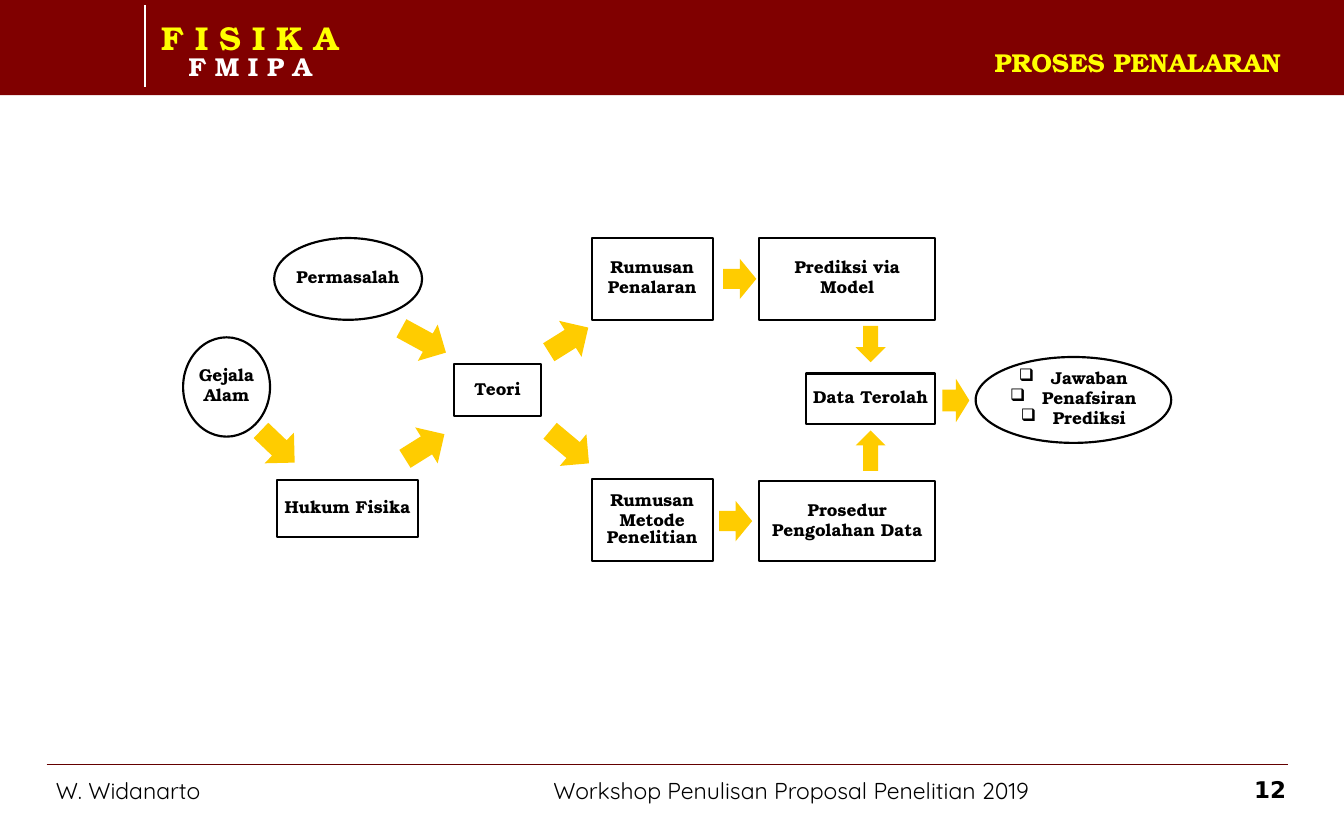
from lxml import etree
from pptx import Presentation
from pptx.dml.color import RGBColor
from pptx.enum.shapes import MSO_CONNECTOR, MSO_SHAPE
from pptx.enum.text import MSO_ANCHOR, PP_ALIGN
from pptx.oxml.ns import qn
from pptx.util import Inches, Pt

RECTANGLE, ELLIPSE = MSO_SHAPE.RECTANGLE, MSO_SHAPE.OVAL
RIGHT_ARROW, DOWN_ARROW, UP_ARROW = MSO_SHAPE.RIGHT_ARROW, MSO_SHAPE.DOWN_ARROW, MSO_SHAPE.UP_ARROW
LEFT, CENTER, RIGHT = PP_ALIGN.LEFT, PP_ALIGN.CENTER, PP_ALIGN.RIGHT
TOP, MIDDLE = MSO_ANCHOR.TOP, MSO_ANCHOR.MIDDLE

MAROON = RGBColor(0x80, 0x00, 0x00)
DARK_RED = RGBColor(0x64, 0x00, 0x00)
YELLOW = RGBColor(0xFF, 0xFF, 0x00)
GOLD = RGBColor(0xFF, 0xCC, 0x00)
WHITE = RGBColor(0xFF, 0xFF, 0xFF)
BLACK = RGBColor(0x00, 0x00, 0x00)

SERIF, SANS, NUMBER_FONT = "TeX Gyre Bonum", "Quicksand", "DejaVu Sans"
SLIDE_WIDTH, SLIDE_HEIGHT = 12.99, 8.03
BAND_HEIGHT = 0.92
BULLET = "❑"
BULLET_INDENT = 0.31
PADDING = (0.11, 0.06)

TITLE = "PROSES PENALARAN"
BRAND = [("F I S I K A", 23, YELLOW, LEFT), ("F M I P A", 18, WHITE, CENTER)]
FOOTERS = [
    ("W. Widanarto", (0.43, 7.5, 1.72, 0.33)),
    ("Workshop Penulisan Proposal Penelitian 2019", (5.24, 7.5, 5.13, 0.33)),
]
PAGE_NUMBER = "12"

# Outline, (left, top, width, height), lines, bulleted
NODES = [
    (ELLIPSE, (1.77, 3.26, 0.84, 0.96), ["Gejala", "Alam"], False),
    (ELLIPSE, (2.65, 2.3, 1.43, 0.79), ["Permasalah"], False),
    (RECTANGLE, (2.68, 4.64, 1.36, 0.55), ["Hukum Fisika"], False),
    (RECTANGLE, (4.39, 3.52, 0.84, 0.5), ["Teori"], False),
    (RECTANGLE, (5.72, 2.3, 1.17, 0.79), ["Rumusan", "Penalaran"], False),
    (RECTANGLE, (7.34, 2.3, 1.7, 0.79), ["Prediksi via", "Model"], False),
    (RECTANGLE, (5.72, 4.63, 1.17, 0.79), ["Rumusan", "Metode Penelitian"], False),
    (RECTANGLE, (7.34, 4.65, 1.7, 0.77), ["Prosedur", "Pengolahan Data"], False),
    (RECTANGLE, (7.79, 3.61, 1.25, 0.49), ["Data Terolah"], False),
    (ELLIPSE, (9.43, 3.45, 1.89, 0.83), ["Jawaban", "Penafsiran", "Prediksi"], True),
]

# Arrow kind, (left, top, width, height), rotation in degrees
ARROWS = [
    (RIGHT_ARROW, (6.99, 2.5, 0.32, 0.39), 0),
    (RIGHT_ARROW, (6.95, 4.84, 0.32, 0.39), 0),
    (RIGHT_ARROW, (3.88, 4.11, 0.45, 0.41), 328),
    (RIGHT_ARROW, (3.85, 3.09, 0.49, 0.4), 28.6),
    (RIGHT_ARROW, (2.46, 4.11, 0.45, 0.41), 43.6),
    (RIGHT_ARROW, (5.27, 3.08, 0.45, 0.41), 328),
    (RIGHT_ARROW, (5.26, 4.12, 0.49, 0.4), 39.9),
    (DOWN_ARROW, (8.27, 3.15, 0.29, 0.35), 0),
    (UP_ARROW, (8.27, 4.16, 0.29, 0.39), 0),
    (RIGHT_ARROW, (9.11, 3.66, 0.26, 0.42), 0),
]


def inches(box):
    return [Inches(value) for value in box]


def prepare_frame(frame, anchor, padding=(0, 0), wrap=True):
    frame.word_wrap = wrap
    frame.vertical_anchor = anchor
    frame.margin_left = frame.margin_right = Inches(padding[0])
    frame.margin_top = frame.margin_bottom = Inches(padding[1])


def add_bullet(paragraph):
    properties = paragraph._p.get_or_add_pPr()
    properties.set("marL", str(Inches(BULLET_INDENT)))
    properties.set("indent", str(-Inches(BULLET_INDENT)))
    etree.SubElement(properties, qn("a:buChar")).set("char", BULLET)


def write_lines(frame, lines, font_name, bold=True, spacing=0.8, gap=0, bulleted=False):
    """Write (text, size, color, alignment) lines, one paragraph each."""
    for index, (text, size, color, alignment) in enumerate(lines):
        paragraph = frame.add_paragraph() if index else frame.paragraphs[0]
        if bulleted:
            add_bullet(paragraph)
        paragraph.alignment = alignment
        paragraph.line_spacing = spacing
        if index and gap:
            paragraph.space_before = Pt(gap)
        run = paragraph.add_run()
        run.text = text
        run.font.name = font_name
        run.font.size = Pt(size)
        run.font.bold = bold
        run.font.color.rgb = color


def add_text(slide, box, lines, font_name, padding=(0, 0), wrap=True, **style):
    frame = slide.shapes.add_textbox(*inches(box)).text_frame
    prepare_frame(frame, TOP, padding, wrap)
    write_lines(frame, lines, font_name, **style)


def add_block(slide, kind, box, fill=None, line=None):
    shape = slide.shapes.add_shape(kind, *inches(box))
    shape.shadow.inherit = False
    if fill is None:
        shape.fill.background()
    else:
        shape.fill.solid()
        shape.fill.fore_color.rgb = fill
    if line is None:
        shape.line.fill.background()
    else:
        shape.line.color.rgb = line
        shape.line.width = Pt(1.5)
    return shape


def add_rule(slide, ends, color, width):
    rule = slide.shapes.add_connector(MSO_CONNECTOR.STRAIGHT, *inches(ends))
    rule.line.color.rgb = color
    rule.line.width = Pt(width)
    etree.SubElement(rule.element.spPr, qn("a:effectLst"))


def main():
    presentation = Presentation()
    presentation.slide_width = Inches(SLIDE_WIDTH)
    presentation.slide_height = Inches(SLIDE_HEIGHT)
    slide = presentation.slides.add_slide(presentation.slide_layouts[5])

    # Header band and brand
    add_block(slide, RECTANGLE, (0, 0, SLIDE_WIDTH, BAND_HEIGHT), fill=MAROON)
    add_rule(slide, (1.4, 0.05, 1.4, 0.84), WHITE, 1.5)
    add_text(slide, (1.56, 0.24, 1.73, 0.55), BRAND, SERIF, wrap=False)

    # Title, brought in front of the band
    title = slide.shapes.title
    title.left, title.top, title.width, title.height = inches((4.92, 0.33, 7.57, 0.54))
    prepare_frame(title.text_frame, MIDDLE, PADDING)
    write_lines(title.text_frame, [(TITLE, 18, YELLOW, RIGHT)], SERIF, spacing=1.0)
    title.element.getparent().append(title.element)

    # Footer
    add_rule(slide, (0.45, 7.39, 12.45, 7.39), DARK_RED, 1)
    for text, box in FOOTERS:
        add_text(slide, box, [(text, 16, BLACK, LEFT)], SANS, PADDING, wrap=False, bold=False)
    add_text(slide, (11.79, 7.43, 0.64, 0.45), [(PAGE_NUMBER, 16, BLACK, RIGHT)],
             NUMBER_FONT, (0, 0.06), spacing=1.0)

    # Flow diagram
    for kind, box, texts, bulleted in NODES:
        node = add_block(slide, kind, box, line=BLACK)
        prepare_frame(node.text_frame, MIDDLE)
        lines = [(text, 12, BLACK, CENTER) for text in texts]
        write_lines(node.text_frame, lines, SERIF, gap=2.4, bulleted=bulleted)
    for kind, box, rotation in ARROWS:
        add_block(slide, kind, box, fill=GOLD).rotation = rotation

    presentation.save("out.pptx")


if __name__ == "__main__":
    main()
